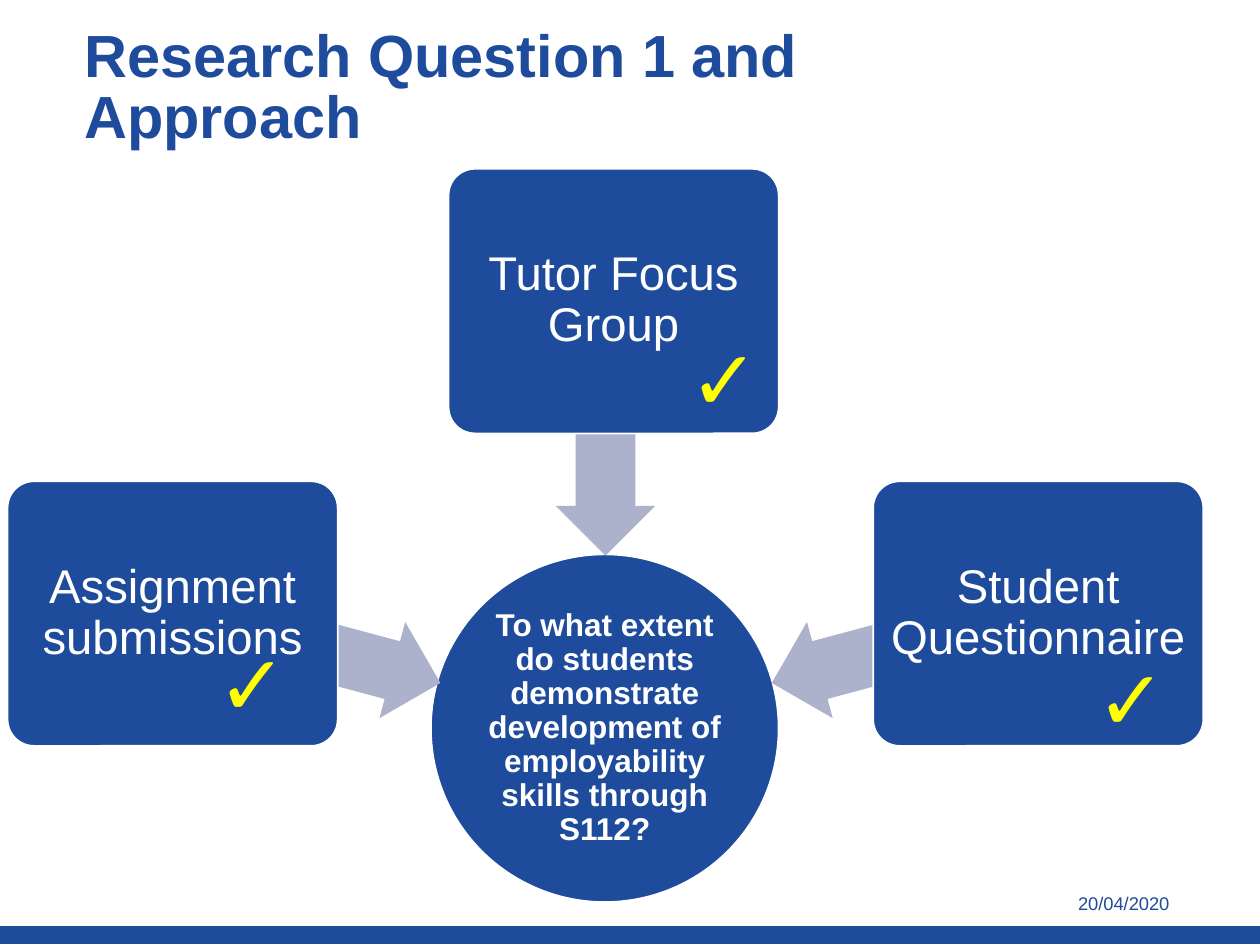
"""Build the research question slide: three data sources feeding one central question."""
from pptx import Presentation, util as u
from pptx.dml.color import RGBColor
from pptx.enum import shapes, text

COLORS = {"blue": "1E4B9B", "arrow": "ACB2CB", "white": "FFFFFF", "tick": "FFFF00"}
TITLE = "Research Question 1 and Approach"
DATE = "20/04/2020"
QUESTION = "To what extent do students demonstrate development of employability skills through S112?"
BOX_SIZE, ARROW_SIZE, TICK_SIZE = (2.62, 2.1), (2.05, 0.79), (0.88, 0.91)
SOURCES = [
    {"label": "Assignment submissions", "box": (0.06, 3.82), "arrow": (1.48, 4.76),
     "turn": 195, "tick": (1.63, 4.96)},
    {"label": "Tutor Focus Group", "box": (3.56, 1.34), "arrow": (3.78, 2.99),
     "turn": 270, "tick": (5.37, 2.54)},
    {"label": "Student Questionnaire", "box": (6.93, 3.82), "arrow": (6.09, 4.76),
     "turn": 345, "tick": (8.6, 5.08)},
]
ALIGN, SHAPE = text.PP_ALIGN, shapes.MSO_SHAPE


def rgb(name):
    return RGBColor.from_string(COLORS[name])


def write(sp, words, size, color, align=ALIGN.LEFT, bold=False, spacing=1.0, insets=None, wrap=True):
    tf = sp.text_frame
    tf.word_wrap = wrap
    if insets:
        tf.margin_left, tf.margin_top, tf.margin_right, tf.margin_bottom = map(u.Inches, insets)
    p = tf.paragraphs[0]
    p.text = words
    p.alignment, p.line_spacing = align, spacing
    font = p.runs[0].font
    font.name, font.size, font.bold = "Arial", u.Pt(size), bold
    font.color.rgb = rgb(color)


def add_text(s, at, *args, **kwargs):
    write(s.shapes.add_textbox(*map(u.Inches, at)), *args, **kwargs)


def add_shape(s, kind, at, fill, line=None):
    sp = s.shapes.add_shape(kind, *map(u.Inches, at))
    sp.shadow.inherit = False
    sp.fill.solid()
    sp.fill.fore_color.rgb = rgb(fill)
    if line:
        sp.line.color.rgb = rgb(line)
        sp.line.width = u.Pt(1)
    else:
        sp.line.fill.background()
    return sp


def add_node(s, kind, at, words, size, inset, bold=False):
    sp = add_shape(s, kind, at, "blue", "white")
    sp.text_frame.vertical_anchor = text.MSO_ANCHOR.MIDDLE
    write(sp, words, size, "white", ALIGN.CENTER, bold, 0.9, [inset] * 4)
    return sp


def main():
    prs = Presentation()
    prs.slide_width, prs.slide_height = u.Inches(10), u.Inches(7.5)
    s = prs.slides.add_slide(prs.slide_layouts[6])

    add_shape(s, SHAPE.RECTANGLE, (0, 7.36, 10, 0.13), "blue", "blue")
    add_text(s, (8.3, 7.03, 1.08, 0.28), DATE, 10.5, "blue", ALIGN.RIGHT)
    add_text(s, (0.63, 0.19, 6.52, 0.96), TITLE, 34, "blue", bold=True,
             spacing=0.85, insets=(0.04, 0.04, 0.02, 0.04))
    add_node(s, SHAPE.OVAL, (3.42, 4.4, 2.76, 2.76), QUESTION, 18, 0.02, bold=True)

    for source in SOURCES:
        arrow = add_shape(s, SHAPE.LEFT_ARROW, source["arrow"] + ARROW_SIZE, "arrow")
        arrow.adjustments[0], arrow.adjustments[1] = 0.6, 0.5
        arrow.rotation = source["turn"]
        box = add_node(s, SHAPE.ROUNDED_RECTANGLE, source["box"] + BOX_SIZE, source["label"], 27, 0.06)
        box.adjustments[0] = 0.1
    for source in SOURCES:
        add_text(s, source["tick"] + TICK_SIZE, "✓", 48, "tick", wrap=False)

    prs.save("out.pptx")


if __name__ == "__main__":
    main()
